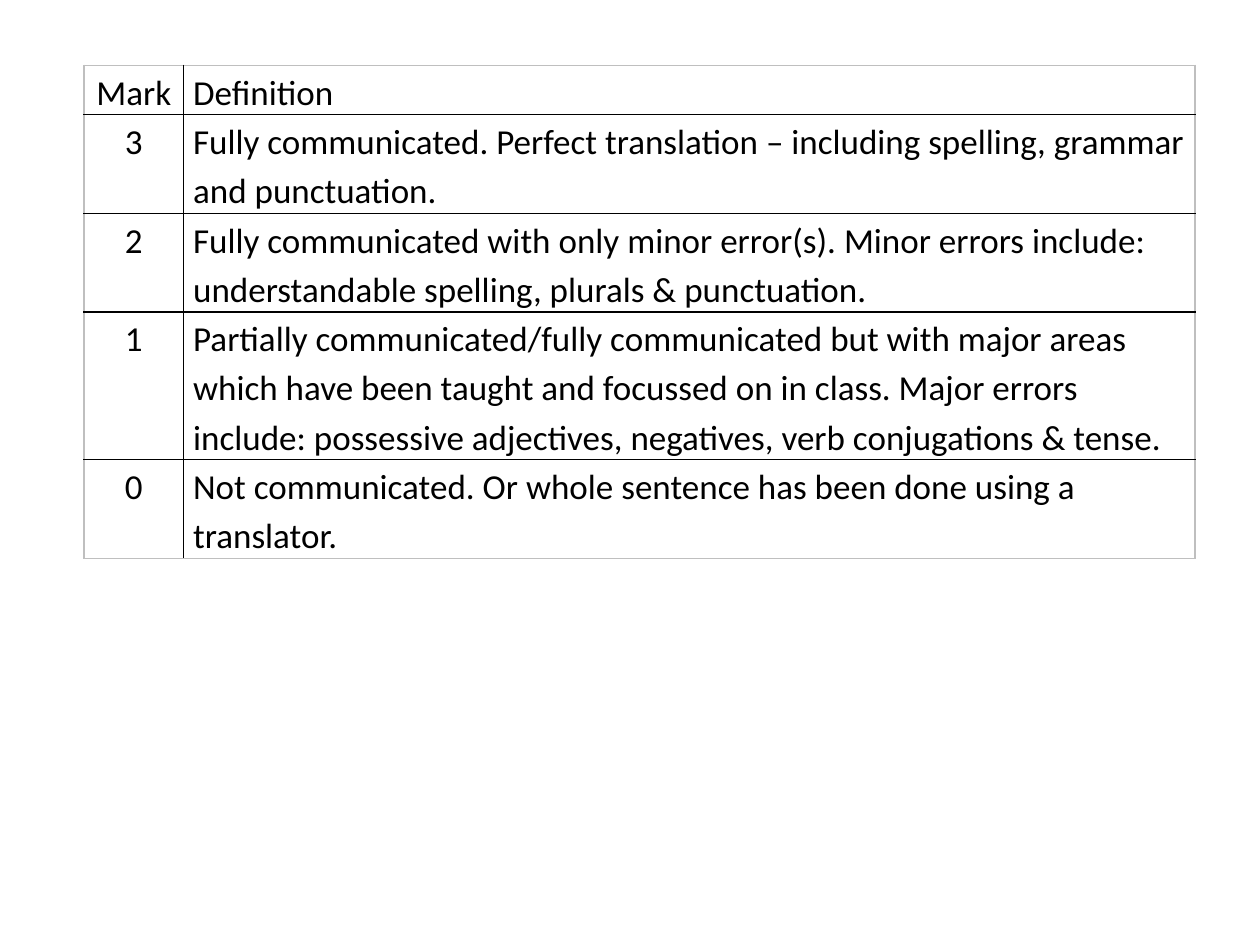
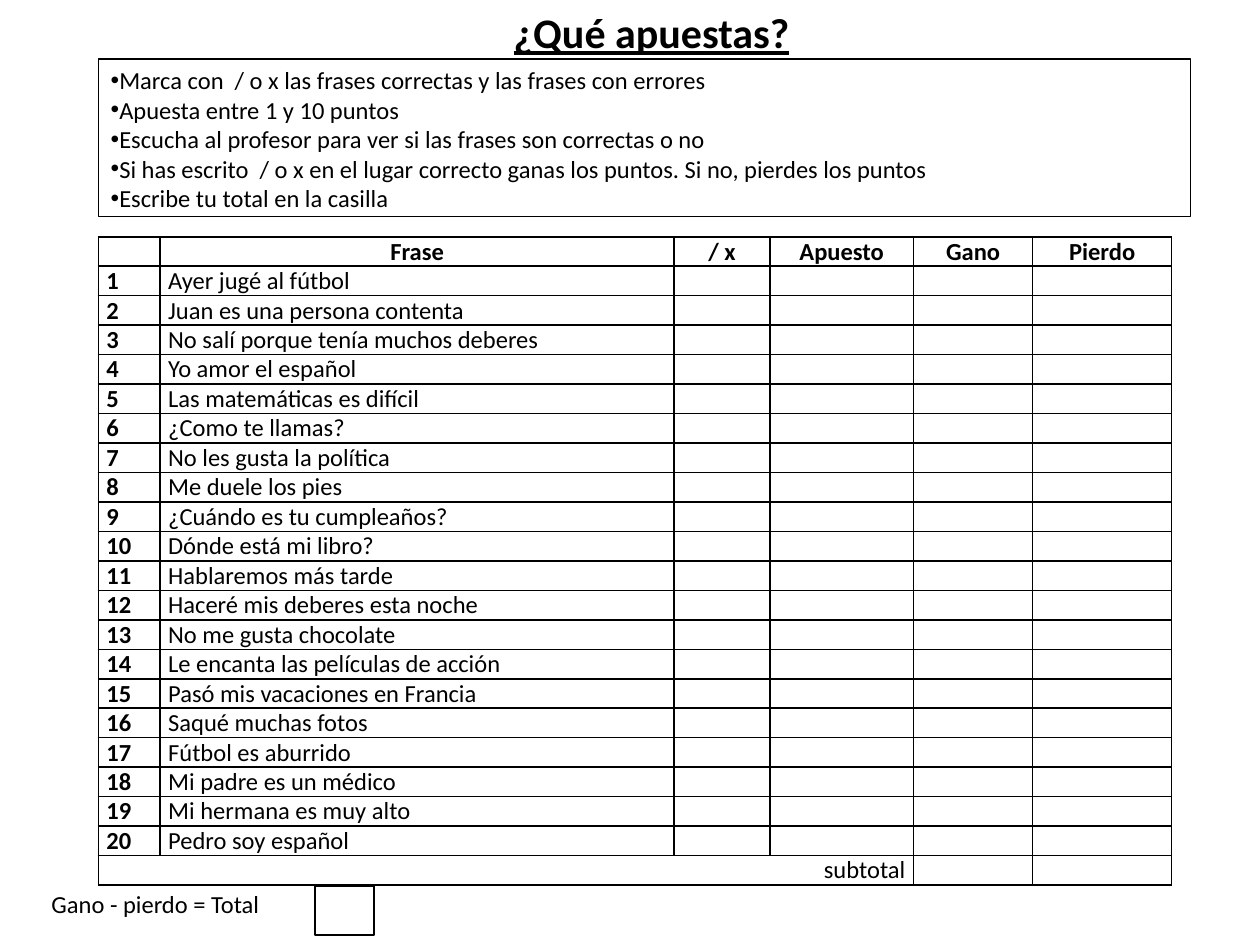
import pptx
import pptx.util
import pptx.dml.color
import pptx.enum.shapes
import pptx.enum.text
import pptx.oxml.ns
import lxml.etree

Pt = pptx.util.Pt
qn = pptx.oxml.ns.qn
ALIGN = pptx.enum.text.PP_ALIGN
COLORS = {"ink": "000000", "edge": "BFBFBF"}


def write(paragraph, text, size, align=ALIGN.LEFT, **style):
    paragraph.alignment = align
    if not text:
        lxml.etree.SubElement(paragraph._p, qn("a:endParaRPr"), sz=str(size * 100))
        return
    run = paragraph.add_run()
    run.text = text
    font_format = {"name": "Calibri", "size": Pt(size), **style}
    for attribute, value in font_format.items():
        setattr(run.font, attribute, value)
    run.font.color.rgb = pptx.dml.color.RGBColor.from_string(COLORS["ink"])


def add_grid(slide, left, top, widths, heights, inset, outer):
    grid = slide.shapes.add_table(
        len(heights), len(widths), Pt(left), Pt(top), Pt(sum(widths)), Pt(sum(heights))
    ).table
    for attribute in ("first_row", "horz_banding"):
        setattr(grid, attribute, False)
    for column, width in zip(grid.columns, widths):
        column.width = Pt(width)
    cell_format = {"margin_left": Pt(inset), "margin_right": Pt(inset), "margin_top": 0, "margin_bottom": 0}
    for r, height in enumerate(heights):
        grid.rows[r].height = Pt(height)
        for c in range(len(widths)):
            cell = grid.cell(r, c)
            for attribute, value in cell_format.items():
                setattr(cell, attribute, value)
            on_edge = {
                "L": c == 0,
                "R": c == len(widths) - 1,
                "T": r == 0,
                "B": r == len(heights) - 1,
            }
            for side, is_outer in on_edge.items():
                border = lxml.etree.SubElement(cell._tc.get_or_add_tcPr(), qn("a:ln" + side), w=str(Pt(1)))
                solid = lxml.etree.SubElement(border, qn("a:solidFill"))
                lxml.etree.SubElement(solid, qn("a:srgbClr"), val=COLORS[outer if is_outer else "ink"])
            cell.fill.background()
    return grid


deck = pptx.Presentation()
deck.slide_width, deck.slide_height = Pt(720), Pt(540)
blank = deck.slide_layouts[6]

marking = deck.slides.add_slide(blank)
definitions = [
    ("Mark", "Definition", 28),
    ("3", "Fully communicated. Perfect translation – including spelling, grammar and punctuation.", 55),
    ("2", "Fully communicated with only minor error(s). Minor errors include:  "
          "understandable spelling, plurals & punctuation.", 55),
    ("1", "Partially communicated/fully communicated but with major areas which have been taught "
          "and focussed on in class. Major errors include: possessive adjectives, negatives, "
          "verb conjugations & tense.", 83),
    ("0", "Not communicated. Or whole sentence has been done using a translator.", 55),
]
mark_grid = add_grid(marking, 48, 37.4, [57, 578], [row[2] for row in definitions], 5.4, "edge")
for r, (mark, definition, _) in enumerate(definitions):
    for c, (text, align) in enumerate([(mark, ALIGN.CENTER), (definition, ALIGN.LEFT)]):
        paragraph = mark_grid.cell(r, c).text_frame.paragraphs[0]
        paragraph.line_spacing = 1.15
        paragraph.space_after = Pt(10)
        write(paragraph, text, 20, align)

betting = deck.slides.add_slide(blank)
captions = [
    ("¿Qué apuestas?", 286.5, 0, 174, 36.5, 24, {"bold": True, "underline": True}),
    ("Gano - pierdo = Total", 22.3, 504, 137.5, 24.5, 14, {}),
]
for text, left, top, width, height, size, style in captions:
    caption = betting.shapes.add_textbox(Pt(left), Pt(top), Pt(width), Pt(height)).text_frame
    caption.word_wrap = False
    caption.vertical_anchor = pptx.enum.text.MSO_ANCHOR.MIDDLE
    write(caption.paragraphs[0], text, size, **style)

instructions = [
    "Marca con  / o x las frases correctas y las frases con errores",
    "Apuesta entre 1 y 10 puntos",
    "Escucha al profesor para ver si las frases son correctas o no",
    "Si has escrito  / o x en el lugar correcto ganas los puntos. Si no, pierdes los puntos",
    "Escribe tu total en la casilla",
]
frames = [(56.2, 33.8, 624.2, 90, instructions), (180, 506.2, 33.8, 28.1, [])]
for left, top, width, height, lines in frames:
    frame = betting.shapes.add_shape(
        pptx.enum.shapes.MSO_SHAPE.RECTANGLE, Pt(left), Pt(top), Pt(width), Pt(height)
    )
    frame.shadow.inherit = False
    frame.fill.background()
    frame.line.color.rgb = pptx.dml.color.RGBColor.from_string(COLORS["ink"])
    frame.line.width = Pt(0.75)
    frame.text_frame.word_wrap = True
    frame.text_frame.vertical_anchor = pptx.enum.text.MSO_ANCHOR.TOP
    for i, line in enumerate(lines):
        paragraph = frame.text_frame.add_paragraph() if i else frame.text_frame.paragraphs[0]
        write(paragraph, line, 14)
        bullet_format = paragraph._p.get_or_add_pPr()
        lxml.etree.SubElement(bullet_format, qn("a:buFont"), typeface="Arial")
        lxml.etree.SubElement(bullet_format, qn("a:buChar"), char="•")

headings = ["", "Frase", "/ x", "Apuesto", "Gano", "Pierdo"]
phrases = [
    "Ayer jugé al fútbol",
    "Juan es una persona contenta",
    "No salí porque tenía muchos deberes",
    "Yo amor el español",
    "Las matemáticas es difícil",
    "¿Como te llamas?",
    "No les gusta la política",
    "Me duele los pies",
    "¿Cuándo es tu cumpleaños?",
    "Dónde está mi libro?",
    "Hablaremos más tarde",
    "Haceré mis deberes esta noche",
    "No me gusta chocolate",
    "Le encanta las películas de acción",
    "Pasó mis vacaciones en Francia",
    "Saqué muchas fotos",
    "Fútbol es aburrido",
    "Mi padre es un médico",
    "Mi hermana es muy alto",
    "Pedro soy español",
]
rows = [headings]
rows += [[str(number), phrase, "", "", "", ""] for number, phrase in enumerate(phrases, 1)]
rows += [["subtotal", "", "", "", "", ""]]
last = len(rows) - 1
bet_grid = add_grid(
    betting, 56.2, 135.3, [35.3, 293.7, 54.8, 82, 68.2, 79.4], [16.83] * len(rows), 4.6, "ink"
)
bet_grid.cell(last, 0).merge(bet_grid.cell(last, 3))
for r, row in enumerate(rows):
    align = {0: ALIGN.CENTER, last: ALIGN.RIGHT}.get(r, ALIGN.LEFT)
    for c, text in enumerate(row):
        bold = r == 0 or (c == 0 and r < last)
        write(bet_grid.cell(r, c).text_frame.paragraphs[0], text, 14, align, bold=bold)

deck.save("out.pptx")
